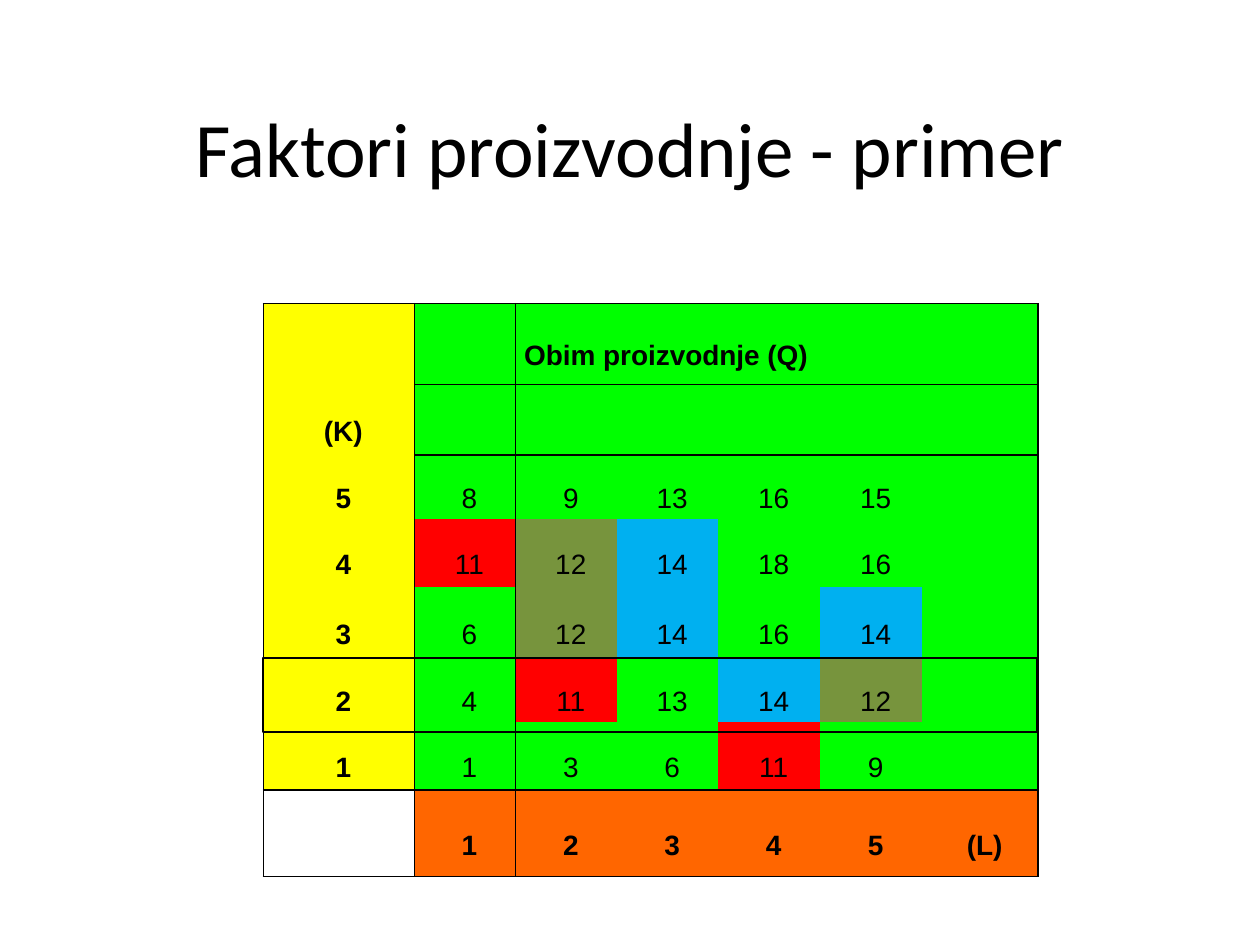
from lxml.etree import SubElement
from pptx import Presentation
from pptx.dml.color import RGBColor
from pptx.enum.shapes import MSO_SHAPE
from pptx.enum.text import MSO_ANCHOR, PP_ALIGN
from pptx.oxml.ns import qn
from pptx.util import Inches, Pt

PLAIN = "{2D5ABB26-0587-4C30-8999-92F81FD0307C}"
BLACK, YELLOW, ORANGE = "000000", "FFFF00", "FF6600"
LEVELS = {11: "FF0000", 12: "77943D", 14: "00B0F0"}
GREEN = "00FF00"
WIDTHS = [1.2, 0.8, 0.81, 0.8, 0.81, 0.81, 0.92]
HEIGHTS = [0.64, 0.56, 0.51, 0.54, 0.56, 0.51, 0.54, 0.69]
OUTPUT = [
    [8, 9, 13, 16, 15],
    [11, 12, 14, 18, 16],
    [6, 12, 14, 16, 14],
    [4, 11, 13, 14, 12],
    [1, 3, 6, 11, 9],
]
ROWS = [
    ["", "", "Obim proizvodnje (Q)", "", "", "", ""],
    ["(K)"] + [""] * 6,
    *[[5 - i, *line, ""] for i, line in enumerate(OUTPUT)],
    ["", 1, 2, 3, 4, 5, "(L)"],
]


def color(code):
    """Turn a hex string into a colour."""
    return RGBColor.from_string(code)


def apply(item, values):
    """Set every attribute named in a dict."""
    for name, value in values.items():
        setattr(item, name, value)


def tint(row, col, value):
    """Give the fill of a cell, or None for the empty corner."""
    if row == 7:
        return ORANGE if col else None
    return LEVELS.get(value, GREEN) if col else YELLOW


def edges(row, col):
    """List the ruled sides of a cell in schema order."""
    sides = {
        "L": col < 2,
        "R": col in (0, 6),
        "T": row in (0, 7) or (row == 1 and col > 0),
        "B": row in (6, 7) or (row == 0 and col > 0),
    }
    return [side for side, ruled in sides.items() if ruled]


class Page:
    """Holds the style and the current slide."""

    title = {"size": Pt(44), "name": "Calibri", "bold": False}
    body = {"size": Pt(16), "name": "Arial"}
    inset = {
        "margin_left": Inches(0.07),
        "margin_top": Inches(0.07),
        "margin_right": 0,
        "margin_bottom": 0,
        "vertical_anchor": MSO_ANCHOR.MIDDLE,
    }

    def __init__(self, deck):
        """Add a blank slide."""
        self.slide = deck.slides.add_slide(deck.slide_layouts[6])

    def label(self, frame, text, font, **para):
        """Put one styled paragraph in a text frame."""
        line = frame.paragraphs[0]
        apply(line, para)
        run = line.add_run()
        run.text = str(text)
        apply(run.font, font)
        run.font.color.rgb = color(BLACK)

    def head(self, text, *box):
        """Add the centred title."""
        frame = self.slide.shapes.add_textbox(*map(Inches, box)).text_frame
        apply(frame, {"word_wrap": True, "vertical_anchor": MSO_ANCHOR.MIDDLE})
        self.label(frame, text, self.title, alignment=PP_ALIGN.CENTER)

    def rule(self, cell, side):
        """Draw one cell border."""
        line = SubElement(cell._tc.get_or_add_tcPr(), qn(f"a:ln{side}"), w=str(Pt(1)))
        fill = SubElement(line, qn("a:solidFill"))
        SubElement(fill, qn("a:srgbClr"), val=BLACK)

    def cell(self, cell, row, col, value):
        """Fill, rule and label one cell."""
        apply(cell, self.inset)
        for side in edges(row, col):
            self.rule(cell, side)
        code = tint(row, col, value)
        if code:
            cell.fill.solid()
            cell.fill.fore_color.rgb = color(code)
        else:
            cell.fill.background()
        if value != "":
            font = {**self.body, "bold": col == 0 or row in (0, 7)}
            align = PP_ALIGN.CENTER if row else PP_ALIGN.LEFT
            self.label(cell.text_frame, value, font, alignment=align, line_spacing=1.5)

    def grid(self, left, top):
        """Add the output table."""
        box = map(Inches, (left, top, sum(WIDTHS), sum(HEIGHTS)))
        table = self.slide.shapes.add_table(len(HEIGHTS), len(WIDTHS), *box).table
        apply(table, {"first_row": False, "horz_banding": False})
        table._tbl.tblPr.find(qn("a:tableStyleId")).text = PLAIN
        for col, width in zip(table.columns, WIDTHS):
            col.width = Inches(width)
        for row, height in zip(table.rows, HEIGHTS):
            row.height = Inches(height)
        for row, line in enumerate(ROWS):
            for col, value in enumerate(line):
                self.cell(table.cell(row, col), row, col, value)
        table.cell(0, 2).merge(table.cell(0, 5))

    def frame(self, *box):
        """Add an unfilled outline."""
        shape = self.slide.shapes.add_shape(MSO_SHAPE.RECTANGLE, *map(Inches, box))
        shape.shadow.inherit = False
        shape.fill.background()
        shape.line.color.rgb = color(BLACK)
        shape.line.width = Pt(1)


def main():
    """Build the slide."""
    deck = Presentation()
    apply(deck, {"slide_width": Inches(10), "slide_height": Inches(7.5)})
    page = Page(deck)
    page.head("Faktori proizvodnje - primer", 0.75, 0.36, 8.5, 1.61)
    page.grid(2.09, 2.41)
    page.frame(2.09, 5.22, 6.14, 0.59)
    deck.save("out.pptx")


if __name__ == "__main__":
    main()
